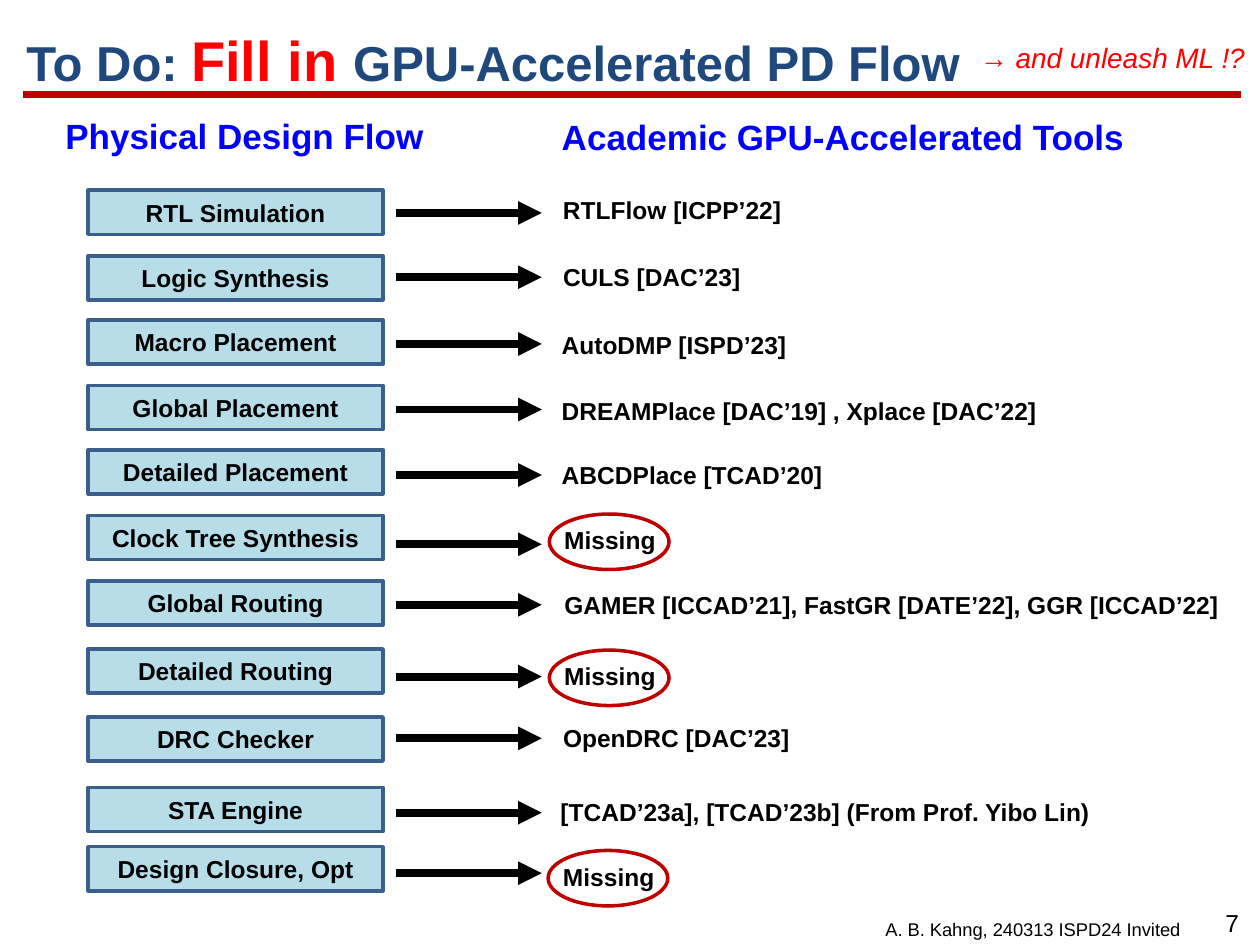
import pptx
import pptx.util
import pptx.dml.color
import pptx.enum.shapes
import pptx.enum.text
import pptx.oxml
import pptx.oxml.ns

Inches, Pt = pptx.util.Inches, pptx.util.Pt
ALIGN = pptx.enum.text.PP_ALIGN
ANCHOR = pptx.enum.text.MSO_ANCHOR
SHAPE = pptx.enum.shapes.MSO_SHAPE

THEME = {
    "font": "Arial", "black": "000000", "navy": "1F497D", "red": "FF0000",
    "blue": "0000FF", "dark_red": "C00000", "box": "B7DEE8", "box_line": "3A5F8C",
    "title": 28, "emphasis": 32, "heading": 20, "aside": 16, "body": 14, "footer": 10.5,
}

TITLE = [("To Do: ", "title", "navy"), ("Fill in ", "emphasis", "red"),
         ("GPU-Accelerated PD Flow", "title", "navy")]
ASIDE = "→ and unleash ML !?"
HEADINGS = [("Physical Design Flow", 0.42, 0.86, 3.07),
            ("Academic GPU-Accelerated Tools", 4.36, 0.87, 4.72)]
MISSING = "Missing"
# stage, box top, arrow y, tool, tool left, tool top, tool width
STAGES = [
    ("RTL Simulation", 1.51, 1.69, "RTLFlow [ICPP’22]", 4.37, 1.5, 1.94),
    ("Logic Synthesis", 2.03, 2.2, "CULS [DAC’23]", 4.37, 2.03, 1.62),
    ("Macro Placement", 2.54, 2.73, "AutoDMP [ISPD’23]", 4.36, 2.57, 2),
    ("Global Placement", 3.06, 3.25, "DREAMPlace [DAC’19] , Xplace [DAC’22]", 4.36, 3.09, 4),
    ("Detailed Placement", 3.57, 3.77, "ABCDPlace [TCAD’20]", 4.36, 3.6, 2.28),
    ("Clock Tree Synthesis", 4.09, 4.32, MISSING, 4.38, 4.12, 0.93),
    ("Global Routing", 4.61, 4.8, "GAMER [ICCAD’21], FastGR [DATE’22], GGR [ICCAD’22]", 4.38, 4.63, 5.49),
    ("Detailed Routing", 5.15, 5.37, MISSING, 4.38, 5.2, 0.93),
    ("DRC Checker", 5.69, 5.86, "OpenDRC [DAC’23]", 4.37, 5.69, 2.01),
    ("STA Engine", 6.25, 6.45, "[TCAD’23a], [TCAD’23b] (From Prof. Yibo Lin)", 4.35, 6.28, 4.44),
    ("Design Closure, Opt", 6.72, 6.93, MISSING, 4.37, 6.79, 0.93),
]
FOOTER = "A. B. Kahng, 240313 ISPD24 Invited"
PAGE = "7"

BOX_LEFT, BOX_W, BOX_H = 0.7, 2.34, 0.35
ARROW_START, ARROW_END = 3.14, 4.3
RING_W, RING_H = 0.95, 0.44


def color(name):
    return pptx.dml.color.RGBColor.from_string(THEME[name])


def style(font, size, ink, bold=False, italic=False):
    font.name, font.size = THEME["font"], Pt(THEME[size])
    font.bold, font.italic = bold, italic
    font.color.rgb = color(ink)


def add_text(slide, text, left, top, width, height, size="body", ink="black",
             bold=False, italic=False, align=ALIGN.LEFT, wrap=False):
    sp = slide.shapes.add_textbox(Inches(left), Inches(top), Inches(width), Inches(height))
    tf = sp.text_frame
    tf.word_wrap = wrap
    p = tf.paragraphs[0]
    p.text, p.alignment = text, align
    style(p.font, size, ink, bold, italic)
    return tf


def add_outline(slide, kind, left, top, width, height, line, fill=None):
    sp = slide.shapes.add_shape(kind, Inches(left), Inches(top), Inches(width), Inches(height))
    sp.shadow.inherit = False
    if fill:
        sp.fill.solid()
        sp.fill.fore_color.rgb = color(fill)
    else:
        sp.fill.background()
    sp.line.color.rgb, sp.line.width = color(line), Pt(2)
    return sp


def add_line(slide, start, end, y, ink, arrow=False):
    c = slide.shapes.add_connector(pptx.enum.shapes.MSO_CONNECTOR.STRAIGHT,
                                   Inches(start), Inches(y), Inches(end), Inches(y))
    c.line.color.rgb, c.line.width = color(ink), Pt(4.5)
    if arrow:
        ln = c.line.fill._xPr
        tail = pptx.oxml.parse_xml(
            '<a:tailEnd %s type="triangle"/>' % pptx.oxml.ns.nsdecls("a"))
        ln.append(tail)
    c._element.spPr.append(
        pptx.oxml.parse_xml("<a:effectLst %s/>" % pptx.oxml.ns.nsdecls("a")))


def add_title(slide):
    sp = slide.shapes.title
    sp.left, sp.top, sp.width, sp.height = (Inches(v) for v in (0.11, 0.18, 7.81, 0.65))
    tf = sp.text_frame
    tf.word_wrap, tf.vertical_anchor = True, ANCHOR.MIDDLE
    tf.auto_size = pptx.enum.text.MSO_AUTO_SIZE.NONE
    p = tf.paragraphs[0]
    p.alignment, p.line_spacing = ALIGN.LEFT, 0.9
    for text, size, ink in TITLE:
        r = p.add_run()
        r.text = text
        style(r.font, size, ink, bold=True)


def add_stage(slide, stage, box_top, arrow_y, tool, tool_left, tool_top, tool_width):
    sp = add_outline(slide, SHAPE.RECTANGLE, BOX_LEFT, box_top, BOX_W, BOX_H, "box_line", "box")
    tf = sp.text_frame
    tf.vertical_anchor = ANCHOR.MIDDLE
    p = tf.paragraphs[0]
    p.text, p.alignment = stage, ALIGN.CENTER
    style(p.font, "body", "black", bold=True)
    add_line(slide, ARROW_START, ARROW_END, arrow_y, "black", arrow=True)
    add_text(slide, tool, tool_left, tool_top, tool_width, 0.34, bold=True)
    if tool == MISSING:
        add_outline(slide, SHAPE.OVAL, tool_left - 0.02, tool_top - 0.04, RING_W, RING_H, "dark_red")


def main():
    prs = pptx.Presentation()
    prs.slide_width, prs.slide_height = Inches(10), Inches(7.5)
    slide = prs.slides.add_slide(prs.slide_layouts[5])
    add_line(slide, 0.18, 9.85, 0.75, "dark_red")
    add_title(slide)
    tf = add_text(slide, ASIDE, 7.68, 0.3, 2.34, 0.35, "aside", "red", italic=True, wrap=True)
    tf.vertical_anchor = ANCHOR.MIDDLE
    tf.paragraphs[0].line_spacing = 0.9
    for text, left, top, width in HEADINGS:
        add_text(slide, text, left, top, width, 0.44, "heading", "blue", bold=True)
    for row in STAGES:
        add_stage(slide, *row)
    add_text(slide, FOOTER, 6.75, 7.24, 2.9, 0.28, "footer", align=ALIGN.CENTER, wrap=True)
    add_text(slide, PAGE, 9.56, 7.16, 0.44, 0.34, align=ALIGN.CENTER, wrap=True)
    prs.save("out.pptx")


if __name__ == "__main__":
    main()
